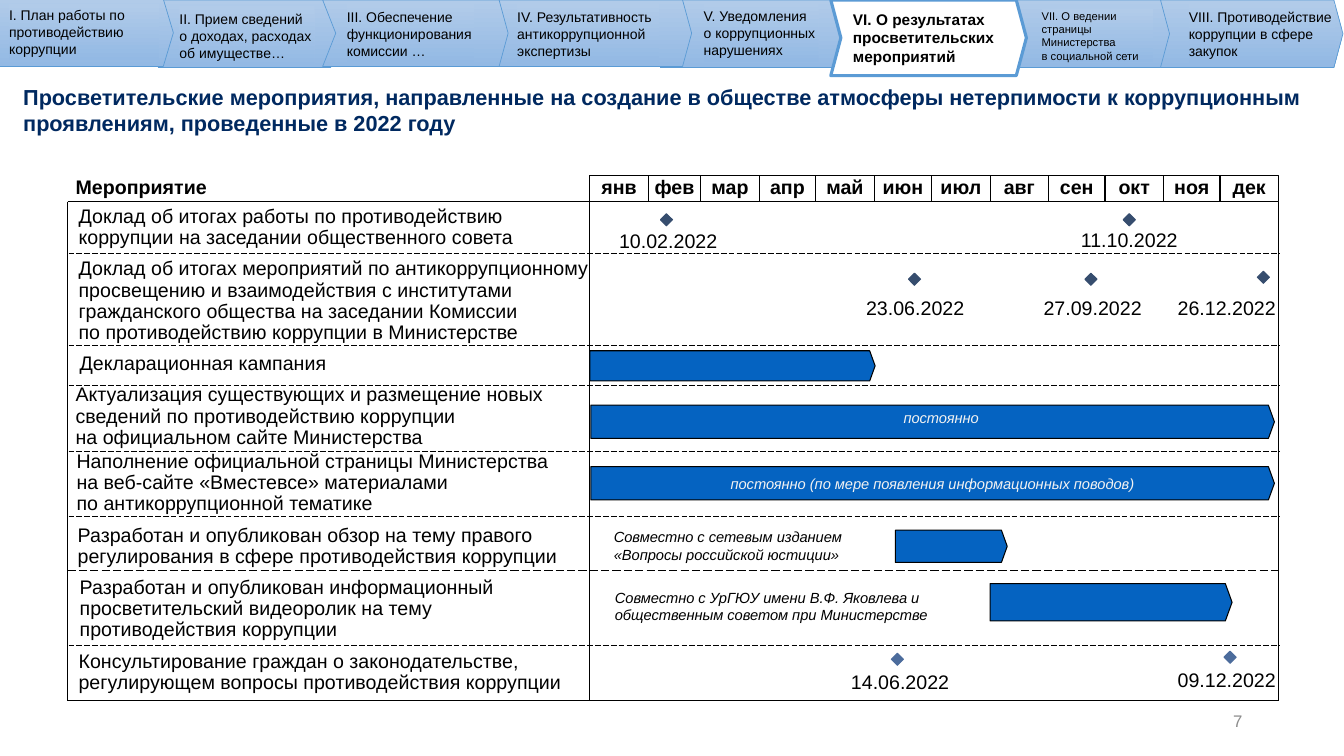
from itertools import pairwise

from lxml.etree import SubElement
from pptx import Presentation
from pptx.dml.color import RGBColor
from pptx.enum.dml import MSO_LINE
from pptx.enum.shapes import MSO_CONNECTOR, MSO_SHAPE
from pptx.enum.text import MSO_ANCHOR, PP_ALIGN
from pptx.oxml.ns import qn
from pptx.util import Inches, Pt

BLACK, WHITE, BLUE = "000000", "FFFFFF", "0563C1"
GRADIENT = ("B1CBE9", "93B9E4")
TIGHT = (0, 0)

presentation = Presentation()
presentation.slide_width = Inches(13.33)
presentation.slide_height = Inches(7.5)
slide = presentation.slides.add_slide(presentation.slide_layouts[6])
shapes = slide.shapes


def paint(shape, fill=None, line=None, width=0.75):
    shape.shadow.inherit = False
    if fill is None:
        shape.fill.background()
    elif fill == GRADIENT:
        shape.fill.gradient()
        shape.fill.gradient_angle = 270
        for stop, color in zip(shape.fill.gradient_stops, GRADIENT):
            stop.color.rgb = RGBColor.from_string(color)
    else:
        shape.fill.solid()
        shape.fill.fore_color.rgb = RGBColor.from_string(fill)
    if line is None:
        shape.line.fill.background()
    else:
        shape.line.color.rgb = RGBColor.from_string(line)
        shape.line.width = Pt(width)


def write(shape, text, size, color=BLACK, margins=(0.1, 0.05), wrap=True,
          anchor=MSO_ANCHOR.TOP, align=PP_ALIGN.LEFT, spacing=None, **styles):
    frame = shape.text_frame
    side, edge = (Inches(margin) for margin in margins)
    layout = {"word_wrap": wrap, "vertical_anchor": anchor, "margin_left": side,
              "margin_right": side, "margin_top": edge, "margin_bottom": edge}
    for name, value in layout.items():
        setattr(frame, name, value)
    for index, content in enumerate(text.split("\n")):
        paragraph = frame.add_paragraph() if index else frame.paragraphs[0]
        paragraph.alignment = align
        paragraph.line_spacing = spacing
        for part, words in enumerate(content.split("|")):
            if part:
                paragraph.add_line_break()
            run = paragraph.add_run()
            run.text = words
            run.font.color.rgb = RGBColor.from_string(color)
            font_values = {"name": "Arial", "size": Pt(size)} | styles
            for name, value in font_values.items():
                setattr(run.font, name, value)


title = shapes.add_textbox(Inches(0.23), Inches(0.83), Inches(13.09), Inches(0.52))
write(title, "Просветительские мероприятия, направленные на создание в обществе атмосферы "
      "нетерпимости к коррупционным проявлениям, проведенные в 2022 году",
      15.5, "002960", TIGHT, bold=True)
page_number = shapes.add_textbox(Inches(9.42), Inches(6.95), Inches(3), Inches(0.4))
write(page_number, "7", 12, "8C8C8C", anchor=MSO_ANCHOR.MIDDLE, align=PP_ALIGN.RIGHT)

months = "янв фев мар апр май июн июл авг сен окт ноя дек".split()
month_edges = [5.85, 6.43, 6.95, 7.53, 8.09, 8.67, 9.24, 9.82, 10.4, 10.96, 11.54, 12.1, 12.68]
for month, (left, right) in zip(months, pairwise(month_edges)):
    cell = shapes.add_shape(MSO_SHAPE.RECTANGLE, Inches(left), Inches(1.74),
                            Inches(right - left), Inches(0.26))
    paint(cell, line=BLACK)
    write(cell, month, 14, margins=(0, 0.03), wrap=False, anchor=MSO_ANCHOR.MIDDLE,
          align=PP_ALIGN.CENTER, spacing=0.9, bold=True)

grid_lines = [(x, 2, x, 6.95, 0.75, None) for x in (0.67, 5.85, 12.68)]
grid_lines += [(0.67, y, 12.68, y, 0.75, None) for y in (2, 6.95)]
grid_lines += [(0.68, y, 12.69, y, 0.5, MSO_LINE.LONG_DASH)
               for y in (2.51, 3.43, 3.82, 4.48, 5.12, 6.4)]
grid_lines.append((0.67, 5.66, 12.68, 5.66, 0.75, MSO_LINE.LONG_DASH))
for x1, y1, x2, y2, width, dash in grid_lines:
    connector = shapes.add_connector(MSO_CONNECTOR.STRAIGHT, Inches(x1), Inches(y1),
                                     Inches(x2), Inches(y2))
    connector.line.color.rgb = RGBColor.from_string(BLACK)
    connector.line.width = Pt(width)
    connector.line.dash_style = dash
    SubElement(connector._element.spPr, qn("a:effectLst"))

period_bars = [
    (5.85, 3.48, 2.83, 0.3),
    (5.86, 4.02, 6.78, 0.33),
    (5.86, 4.63, 6.78, 0.33),
    (8.88, 5.26, 1.11, 0.32),
    (9.82, 5.79, 2.4, 0.37),
]
for bounds in period_bars:
    bar = shapes.add_shape(MSO_SHAPE.PENTAGON, *map(Inches, bounds))
    bar.adjustments[0] = 0.179
    paint(bar, BLUE, BLACK)

activities = [
    (0.78, 2.05, 5, 0.42, "Доклад об итогах работы по противодействию\n"
     "коррупции на заседании общественного совета"),
    (0.78, 2.57, 5.2, 0.84, "Доклад об итогах мероприятий по антикоррупционному\n"
     "просвещению и взаимодействия с институтами\n"
     "гражданского общества на заседании Комиссии\n"
     "по противодействию коррупции в Министерстве"),
    (0.79, 3.51, 5, 0.21, "Декларационная кампания"),
    (0.75, 3.82, 5, 0.63, "Актуализация существующих и размещение новых\n"
     "сведений по противодействию коррупции\nна официальном сайте Министерства"),
    (0.76, 4.48, 5, 0.63, "Наполнение официальной страницы Министерства\n"
     "на веб-сайте «Вместевсе» материалами\nпо антикоррупционной тематике"),
    (0.77, 5.21, 5, 0.42, "Разработан и опубликован обзор на тему правого\n"
     "регулирования в сфере противодействия коррупции"),
    (0.79, 5.73, 5, 0.63, "Разработан и опубликован информационный\n"
     "просветительский видеоролик на тему\nпротиводействия коррупции"),
    (0.78, 6.46, 5, 0.42, "Консультирование граждан о законодательстве,|"
     "регулирующем вопросы противодействия коррупции"),
]
for *bounds, text in activities:
    activity = shapes.add_textbox(*map(Inches, bounds))
    write(activity, text, 14, margins=TIGHT, spacing=0.9)
heading = shapes.add_textbox(Inches(0.75), Inches(1.76), Inches(1.5), Inches(0.21))
write(heading, "Мероприятие", 14, margins=TIGHT, anchor=MSO_ANCHOR.BOTTOM,
      spacing=0.9, bold=True)

DARK, LIGHT = "364D6E", "4C6C9C"
milestones = [
    ("10.02.2022", 6.14, 2.3, 6.55, 2.12, DARK),
    ("11.10.2022", 10.72, 2.29, 11.14, 2.12, DARK),
    ("23.06.2022", 8.59, 2.96, 9.01, 2.71, DARK),
    ("27.09.2022", 10.35, 2.96, 10.76, 2.71, DARK),
    ("26.12.2022", 11.68, 2.96, 12.47, 2.69, DARK),
    ("14.06.2022", 8.44, 6.67, 8.84, 6.48, LIGHT),
    ("09.12.2022", 11.68, 6.65, 12.14, 6.46, LIGHT),
]
for date, date_left, date_top, left, top, color in milestones:
    label = shapes.add_shape(MSO_SHAPE.RECTANGLE, Inches(date_left), Inches(date_top),
                             Inches(0.97), Inches(0.21))
    paint(label, WHITE)
    write(label, date, 14, margins=TIGHT, wrap=False, spacing=0.9)
    marker = shapes.add_shape(MSO_SHAPE.DIAMOND, Inches(left), Inches(top),
                              Inches(0.12), Inches(0.12))
    paint(marker, color, color)

remarks = [
    (7.96, 4.01, 2.75, 0.28, "постоянно", "F2F2F2", PP_ALIGN.CENTER),
    (7.04, 4.66, 4.42, 0.28, "постоянно (по мере появления информационных поводов)",
     "F2F2F2", PP_ALIGN.CENTER),
    (5.99, 5.19, 2.64, 0.45, "Совместно с сетевым изданием «Вопросы российской юстиции»",
     BLACK, PP_ALIGN.LEFT),
    (6, 5.79, 3.39, 0.45, "Совместно с УрГЮУ имени В.Ф. Яковлева и общественным советом "
     "при Министерстве", BLACK, PP_ALIGN.LEFT),
]
for *bounds, text, color, align in remarks:
    remark = shapes.add_textbox(*map(Inches, bounds))
    write(remark, text, 10.5, color, align=align, italic=True)

tab_outlines = [
    (6.55, 0, 8.61, 0.67, 0.1, 0.1, GRADIENT, 0.5),
    (1.57, 0, 3.38, 0.67, 0.1, 0.1, GRADIENT, 0.5),
    (3.2, 0, 5.48, 0.66, 0.13, 0.13, GRADIENT, 0.5),
    (9.94, 0, 11.75, 0.67, 0.09, 0.09, GRADIENT, 0.5),
    (8.24, 0, 10.18, 0.75, 0.1, 0.1, WHITE, 2.25),
    (-0.02, -0.01, 1.72, 0.66, 0, 0.1, GRADIENT, 0.5),
    (11.51, 0, 13.32, 0.67, 0.09, 0.09, GRADIENT, 0.5),
    (4.95, 0, 6.86, 0.66, 0.09, 0.09, GRADIENT, 0.5),
]
for left, top, right, bottom, notch, tip, fill, width in tab_outlines:
    middle = (top + bottom) / 2
    corners = [(left, top), (right - tip, top), (right, middle),
               (right - tip, bottom), (left, bottom), (left + notch, middle)]
    points = [(Inches(x), Inches(y)) for x, y in corners]
    builder = shapes.build_freeform(*points[0])
    builder.add_line_segments(points[1:], close=True)
    paint(builder.convert_to_shape(), fill, "5B9BD5", width)

tab_labels = [
    (0.09, 0.04, 1.49, 0.56, "I. План работы по противодействию коррупции", 10, GRADIENT),
    (1.78, 0.06, 1.34, 0.59, "II. Прием сведений|о доходах, расходах|об имуществе…", 10, GRADIENT),
    (3.44, 0.04, 1.26, 0.59, "III. Обеспечение функционирования комиссии …", 10, GRADIENT),
    (5.13, 0.04, 1.41, 0.59, "IV. Результативность антикоррупционной экспертизы", 10, GRADIENT),
    (6.98, 0.03, 1.14, 0.59, "V. Уведомления|о коррупционных нарушениях", 10, GRADIENT),
    (8.46, 0.08, 1.47, 0.59, "VI. О результатах просветительских мероприятий", 11, None),
    (10.33, 0.09, 1.11, 0.53, "VII. О ведении страницы Министерства\nв социальной сети", 8, GRADIENT),
    (11.79, 0.04, 1.45, 0.59, "VIII. Противодействие коррупции в сфере закупок", 10, GRADIENT),
]
for *bounds, text, size, fill in tab_labels:
    label = shapes.add_shape(MSO_SHAPE.RECTANGLE, *map(Inches, bounds))
    paint(label, fill)
    write(label, text, size, margins=TIGHT, anchor=MSO_ANCHOR.MIDDLE, bold=fill is None)

presentation.save("out.pptx")
